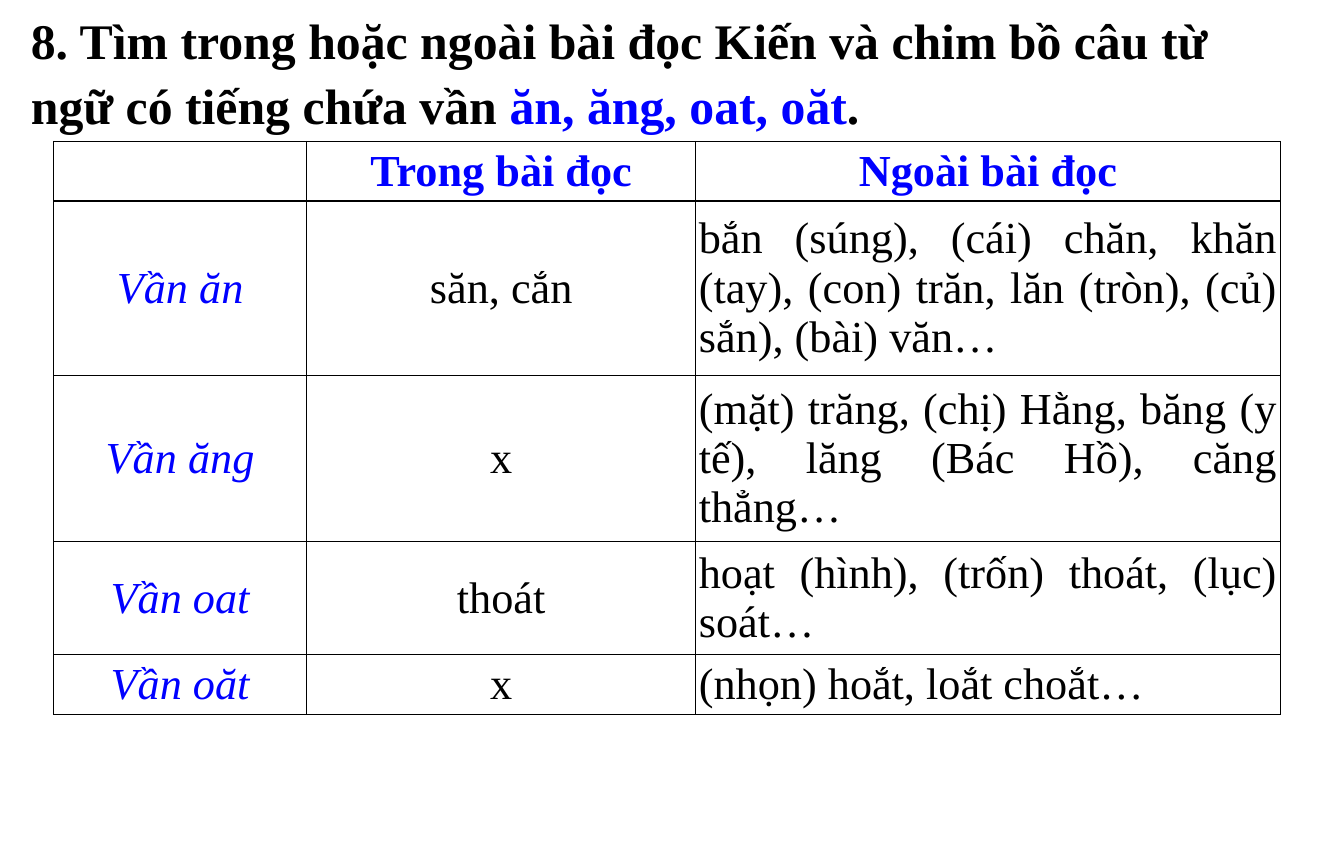
import pptx
import pptx.dml.color
import pptx.enum.text
import pptx.oxml
import pptx.oxml.ns
import pptx.util

PX = 9144
ALIGN = pptx.enum.text.PP_ALIGN
ANCHOR = pptx.enum.text.MSO_ANCHOR
THEME = {
    "font": "Times New Roman",
    "black": "000000",
    "blue": "0000FF",
    "title": 36,
    "table": 32,
}
INSETS = {"margin_left": 3 * PX, "margin_right": 3 * PX,
          "margin_top": 3 * PX, "margin_bottom": 3 * PX}
COLUMN_WIDTHS = [254, 391, 587]
ROW_HEIGHTS = [60, 175, 167, 114, 60]
HEADER = {"color": "blue", "bold": True, "align": ALIGN.CENTER}
BODY_STYLES = [
    {"color": "blue", "italic": True, "align": ALIGN.CENTER},
    {"color": "black", "align": ALIGN.CENTER},
    {"color": "black", "align": ALIGN.JUSTIFY},
]
ROWS = [
    ["", "Trong bài đọc", "Ngoài bài đọc"],
    ["Vần ăn", "săn, cắn",
     "bắn (súng), (cái) chăn, khăn (tay), (con) trăn, lăn (tròn), (củ) sắn), (bài) văn…"],
    ["Vần ăng", "x",
     "(mặt) trăng, (chị) Hằng, băng (y tế), lăng (Bác Hồ), căng thẳng…"],
    ["Vần oat", "thoát", "hoạt (hình), (trốn) thoát, (lục) soát…"],
    ["Vần oăt", "x", "(nhọn) hoắt, loắt choắt…"],
]


def add_span(para, text, size, color, bold=False, italic=False):
    span = para.add_run()
    span.text = text
    values = {"name": THEME["font"], "size": pptx.util.Pt(THEME[size]),
              "bold": bold, "italic": italic}
    for name, value in values.items():
        setattr(span.font, name, value)
    span.font.color.rgb = pptx.dml.color.RGBColor.from_string(THEME[color])


def add_borders(cell):
    properties = cell._tc.get_or_add_tcPr()
    for position, side in enumerate(["lnL", "lnR", "lnT", "lnB"]):
        border = pptx.oxml.parse_xml(
            f'<a:{side} {pptx.oxml.ns.nsdecls("a")} w="12700"><a:solidFill>'
            f'<a:srgbClr val="{THEME["black"]}"/></a:solidFill></a:{side}>')
        properties.insert(position, border)


deck = pptx.Presentation()
deck.slide_width = 1350 * PX
deck.slide_height = 850 * PX
page = deck.slides.add_slide(deck.slide_layouts[5])

title = page.shapes.title
for name, value in {"left": 21, "top": -1, "width": 1266, "height": 131}.items():
    setattr(title, name, value * PX)
frame_format = {"word_wrap": True, "vertical_anchor": ANCHOR.TOP,
                "auto_size": pptx.enum.text.MSO_AUTO_SIZE.NONE}
for name, value in frame_format.items():
    setattr(title.text_frame, name, value)
para = title.text_frame.paragraphs[0]
para.alignment = ALIGN.LEFT
para.line_spacing = 1.09
for text, color in [
    ("8. Tìm trong hoặc ngoài bài đọc Kiến và chim bồ câu từ ngữ có tiếng chứa vần ", "black"),
    ("ăn, ăng, oat, oăt", "blue"),
    (".", "black"),
]:
    add_span(para, text, "title", color, bold=True)

table = page.shapes.add_table(
    len(ROWS), len(COLUMN_WIDTHS), 54 * PX, 142 * PX,
    sum(COLUMN_WIDTHS) * PX, sum(ROW_HEIGHTS) * PX).table
table.first_row = False
table.horz_banding = False
for column, width in zip(table.columns, COLUMN_WIDTHS):
    column.width = width * PX
for row, height in zip(table.rows, ROW_HEIGHTS):
    row.height = height * PX

for row_index, texts in enumerate(ROWS):
    for column_index, text in enumerate(texts):
        cell = table.cell(row_index, column_index)
        cell.fill.background()
        cell.vertical_anchor = ANCHOR.MIDDLE
        for name, value in INSETS.items():
            setattr(cell, name, value)
        add_borders(cell)
        if text:
            style = dict(BODY_STYLES[column_index] if row_index else HEADER)
            para = cell.text_frame.paragraphs[0]
            para.alignment = style.pop("align")
            add_span(para, text, "table", **style)

deck.save("out.pptx")
